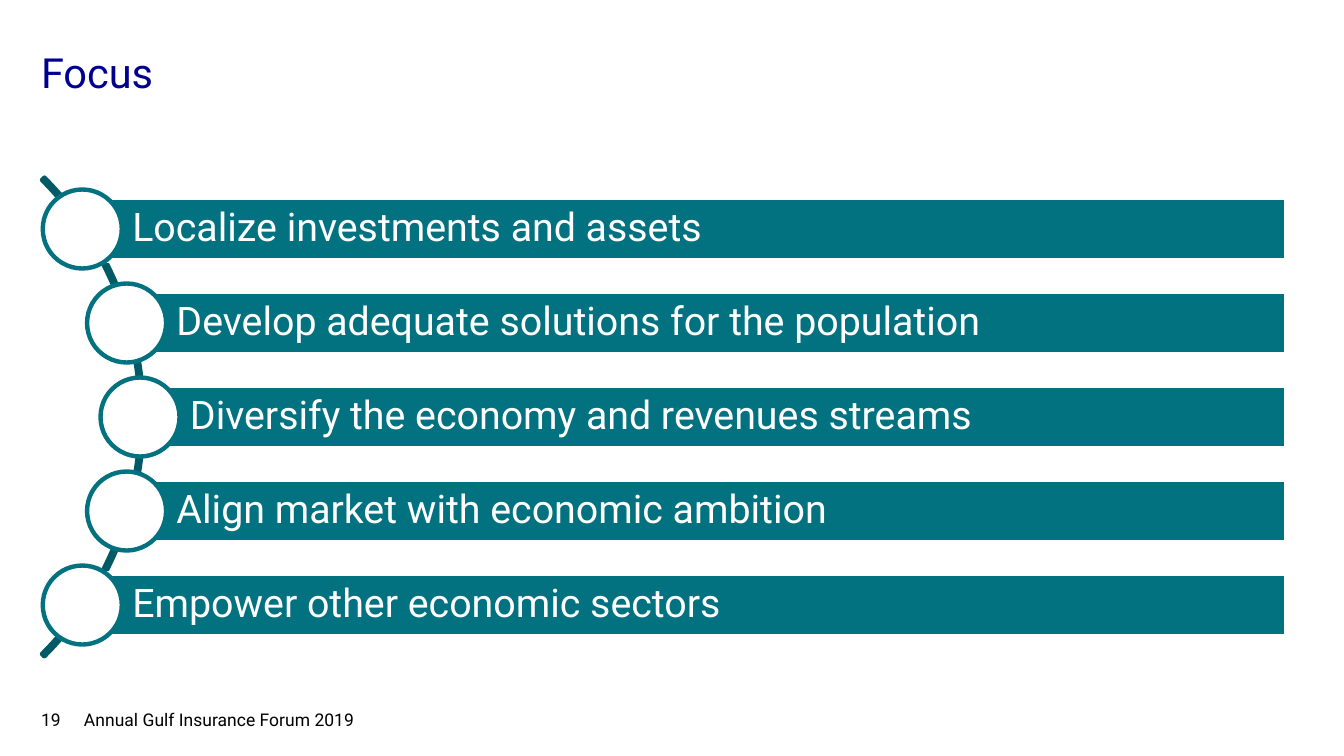
from dataclasses import dataclass
from math import sqrt

from pptx import Presentation
from pptx.dml.color import RGBColor
from pptx.enum.shapes import MSO_SHAPE as Preset
from pptx.enum.text import MSO_ANCHOR as Anchor, PP_ALIGN as Align
from pptx.util import Emu, Pt

EMU_PER_PX = 914400 / 157.4
SLIDE_SIZE = (1344, 756)

ARC_CENTER = (-195, 417)
ARC_DIAMETER = 677
ARC_ANGLES = (189, 27, 0.005)
NODE_RADIUS = 335
ROW_PITCH = 94
BAR_HEIGHT = 63
BAR_RIGHT = 1286
CIRCLE_SIZE = 79
BAR_INSETS = (50, 8, 8, 8)

FOCUS_POINTS = (
    "Localize investments and assets",
    "Develop adequate solutions for the population",
    "Diversify the economy and revenues streams",
    "Align market with economic ambition",
    "Empower other economic sectors",
)


@dataclass(frozen=True)
class Theme:
    font: str = "Roboto"
    title: str = "00008F"
    teal: str = "027180"
    arc: str = "025A67"
    white: str = "FFFFFF"
    black: str = "000000"
    title_size: int = 19
    bar_size: int = 18
    footer_size: int = 8
    line_width: int = 2


THEME = Theme()


def px(value):
    return Emu(round(value * EMU_PER_PX))


def set_attributes(target, values):
    for name, value in values.items():
        setattr(target, name, value)


def write_text(shape, text, size, color, insets=(0, 0, 0, 0),
               anchor=Anchor.MIDDLE, line_spacing=1.0):
    left, top, right, bottom = map(px, insets)
    frame = shape.text_frame
    set_attributes(frame, {
        "word_wrap": True, "vertical_anchor": anchor,
        "margin_left": left, "margin_top": top,
        "margin_right": right, "margin_bottom": bottom,
    })
    paragraph = frame.paragraphs[0]
    set_attributes(paragraph, {
        "text": text, "alignment": Align.LEFT, "line_spacing": line_spacing,
    })
    set_attributes(paragraph.font, {"name": THEME.font, "size": Pt(size)})
    paragraph.font.color.rgb = RGBColor.from_string(color)


def add_label(slide, box, text, size, color, **text_format):
    shape = slide.shapes.add_textbox(*map(px, box))
    write_text(shape, text, size, color, **text_format)


def add_outlined(slide, preset, box, line, fill=None):
    shape = slide.shapes.add_shape(preset, *map(px, box))
    shape.shadow.inherit = False
    if fill:
        shape.fill.solid()
        shape.fill.fore_color.rgb = RGBColor.from_string(fill)
    else:
        shape.fill.background()
    shape.line.color.rgb = RGBColor.from_string(line)
    shape.line.width = Pt(THEME.line_width)
    return shape


def add_arc(slide):
    left, top = (center - ARC_DIAMETER / 2 for center in ARC_CENTER)
    arc = add_outlined(slide, Preset.BLOCK_ARC,
                       (left, top, ARC_DIAMETER, ARC_DIAMETER), THEME.arc)
    for index, value in enumerate(ARC_ANGLES):
        arc.adjustments[index] = value


def add_focus_point(slide, text, row_offset):
    drop = row_offset * ROW_PITCH
    center_x = ARC_CENTER[0] + sqrt(NODE_RADIUS ** 2 - drop ** 2)
    center_y = ARC_CENTER[1] + drop
    bar = add_outlined(
        slide, Preset.RECTANGLE,
        (center_x, center_y - BAR_HEIGHT / 2, BAR_RIGHT - center_x, BAR_HEIGHT),
        THEME.white, THEME.teal)
    write_text(bar, text, THEME.bar_size, THEME.white,
               insets=BAR_INSETS, line_spacing=0.9)
    add_outlined(
        slide, Preset.OVAL,
        (center_x - CIRCLE_SIZE / 2, center_y - CIRCLE_SIZE / 2,
         CIRCLE_SIZE, CIRCLE_SIZE),
        THEME.teal, THEME.white)


def main():
    presentation = Presentation()
    width, height = map(px, SLIDE_SIZE)
    set_attributes(presentation, {"slide_width": width, "slide_height": height})
    slide = presentation.slides.add_slide(presentation.slide_layouts[6])

    add_label(slide, (41, 47, 1264, 49), "Focus",
              THEME.title_size, THEME.title, anchor=Anchor.TOP)
    add_arc(slide)
    middle = len(FOCUS_POINTS) // 2
    for row, text in enumerate(FOCUS_POINTS):
        add_focus_point(slide, text, row - middle)
    add_label(slide, (41, 707, 38, 25), "19", THEME.footer_size, THEME.black)
    add_label(slide, (68, 699, 313, 41), "Annual Gulf Insurance Forum 2019",
              THEME.footer_size, THEME.black, insets=(16, 8, 16, 8))

    presentation.save("out.pptx")


if __name__ == "__main__":
    main()
